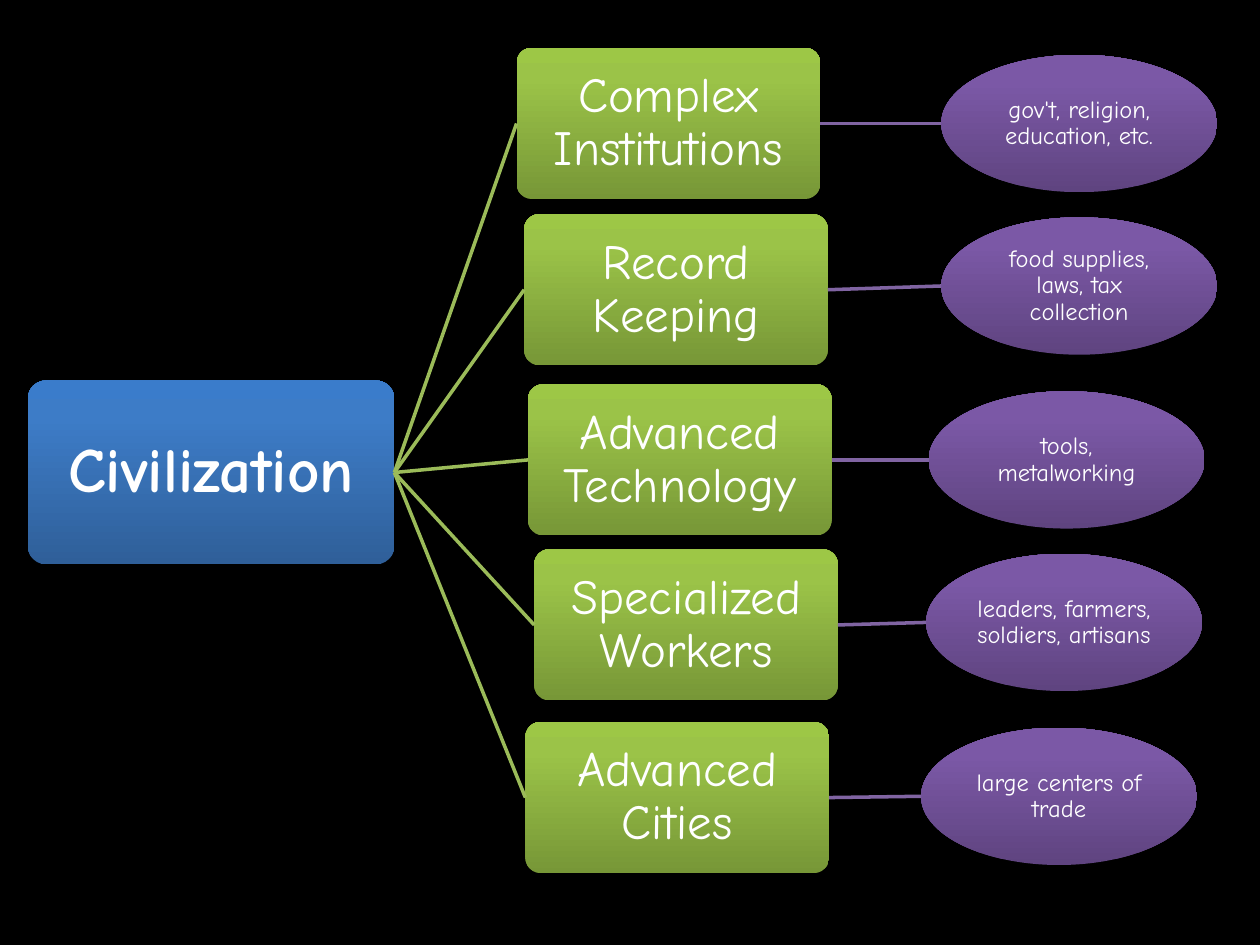
from copy import deepcopy

from pptx import Presentation
from pptx.dml.color import RGBColor
from pptx.enum.shapes import MSO_CONNECTOR, MSO_SHAPE
from pptx.enum.text import MSO_ANCHOR, PP_ALIGN
from pptx.oxml import parse_xml
from pptx.oxml.ns import nsdecls, qn
from pptx.util import Inches, Pt

ROUNDED = MSO_SHAPE.ROUNDED_RECTANGLE
OVAL = MSO_SHAPE.OVAL
STRAIGHT = MSO_CONNECTOR.STRAIGHT
MIDDLE = MSO_ANCHOR.MIDDLE
CENTER = PP_ALIGN.CENTER
LEFT_SIDE, RIGHT_SIDE = 1, 3

ROOT = ("Civilization", 0.22, 3.75)
BRANCHES = [
    ("Complex Institutions", 4.1, 0.98, "gov't, religion, education, etc.", 7.47, 0.98),
    ("Record Keeping", 4.16, 2.3, "food supplies, laws, tax collection", 7.47, 2.27),
    ("Advanced Technology", 4.19, 3.65, "tools, metalworking", 7.37, 3.65),
    ("Specialized Workers", 4.24, 4.96, "leaders, farmers, soldiers, artisans", 7.35, 4.94),
    ("Advanced Cities", 4.17, 6.33, "large centers of trade", 7.31, 6.32),
]

THEME = {
    "font": "Comic Neue",
    "background": "000000",
    "text": "FFFFFF",
    "trait_line": "9BBB59",
    "example_line": "8064A2",
    "line_width": 2,
    "stops": (0, 0.8, 1),
}
NODES = {
    "root": {"kind": ROUNDED, "width": 2.91, "height": 1.46, "size": 36, "bold": True,
             "inset": 0.03, "gradient": ("2F5F99", "3D7CC7", "3A7CCB")},
    "trait": {"kind": ROUNDED, "width": 2.41, "height": 1.2, "size": 28, "bold": False,
              "inset": 0.02, "gradient": ("779737", "9BC348", "9DC746")},
    "example": {"kind": OVAL, "width": 2.19, "height": 1.09, "size": 14, "bold": False,
                "inset": 0.01, "gradient": ("5F4480", "7B58A6", "7C57A8")},
}
SHADOW = (
    f'<a:outerShdw {nsdecls("a")} blurRad="{Pt(3.1)}" dist="{Pt(1.8)}" dir="5400000" rotWithShape="0">'
    '<a:srgbClr val="000000"><a:alpha val="35000"/></a:srgbClr></a:outerShdw>'
)


def set_all(target, values):
    for name, value in values.items():
        setattr(target, name, value)


def fill_gradient(shape, colors):
    shape.fill.gradient()
    shape.fill.gradient_angle = 90
    stop_list = shape._element.spPr.find(".//" + qn("a:gsLst"))
    stop_list.append(deepcopy(stop_list[0]))
    for stop, position, color in zip(shape.fill.gradient_stops, THEME["stops"], colors):
        stop.position = position
        stop.color.rgb = RGBColor.from_string(color)


def add_node(slide, role, text, left, middle):
    node = NODES[role]
    shape = slide.shapes.add_shape(
        node["kind"], Inches(left), Inches(middle - node["height"] / 2),
        Inches(node["width"]), Inches(node["height"]))
    if node["kind"] == ROUNDED:
        shape.adjustments[0] = 0.1
    fill_gradient(shape, node["gradient"])
    shape.line.fill.background()
    shape.shadow.inherit = False
    shape._element.spPr.find(qn("a:effectLst")).append(parse_xml(SHADOW))

    frame = shape.text_frame
    inset = Inches(node["inset"])
    set_all(frame, {"text": text, "word_wrap": True, "vertical_anchor": MIDDLE,
                    "margin_left": inset, "margin_right": inset,
                    "margin_top": inset, "margin_bottom": inset})
    paragraph = frame.paragraphs[0]
    set_all(paragraph, {"alignment": CENTER, "line_spacing": 0.9})
    font = paragraph.runs[0].font
    set_all(font, {"name": THEME["font"], "size": Pt(node["size"]), "bold": node["bold"]})
    font.color.rgb = RGBColor.from_string(THEME["text"])
    return shape


def add_link(slide, source, target, color):
    connector = slide.shapes.add_connector(
        STRAIGHT, source.left + source.width, source.top + source.height // 2,
        target.left, target.top + target.height // 2)
    connector.begin_connect(source, RIGHT_SIDE)
    if target.auto_shape_type == ROUNDED:
        connector.end_connect(target, LEFT_SIDE)
    connector.line.color.rgb = RGBColor.from_string(color)
    connector.line.width = Pt(THEME["line_width"])
    connector._element.spPr.append(parse_xml(f'<a:effectLst {nsdecls("a")}/>'))


def main():
    presentation = Presentation()
    set_all(presentation, {"slide_width": Inches(10), "slide_height": Inches(7.5)})
    slide = presentation.slides.add_slide(presentation.slide_layouts[6])
    slide.background.fill.solid()
    slide.background.fill.fore_color.rgb = RGBColor.from_string(THEME["background"])

    root = add_node(slide, "root", *ROOT)
    for trait, trait_left, trait_middle, example, example_left, example_middle in BRANCHES:
        trait_shape = add_node(slide, "trait", trait, trait_left, trait_middle)
        example_shape = add_node(slide, "example", example, example_left, example_middle)
        add_link(slide, root, trait_shape, THEME["trait_line"])
        add_link(slide, trait_shape, example_shape, THEME["example_line"])
    presentation.save("out.pptx")


if __name__ == "__main__":
    main()
